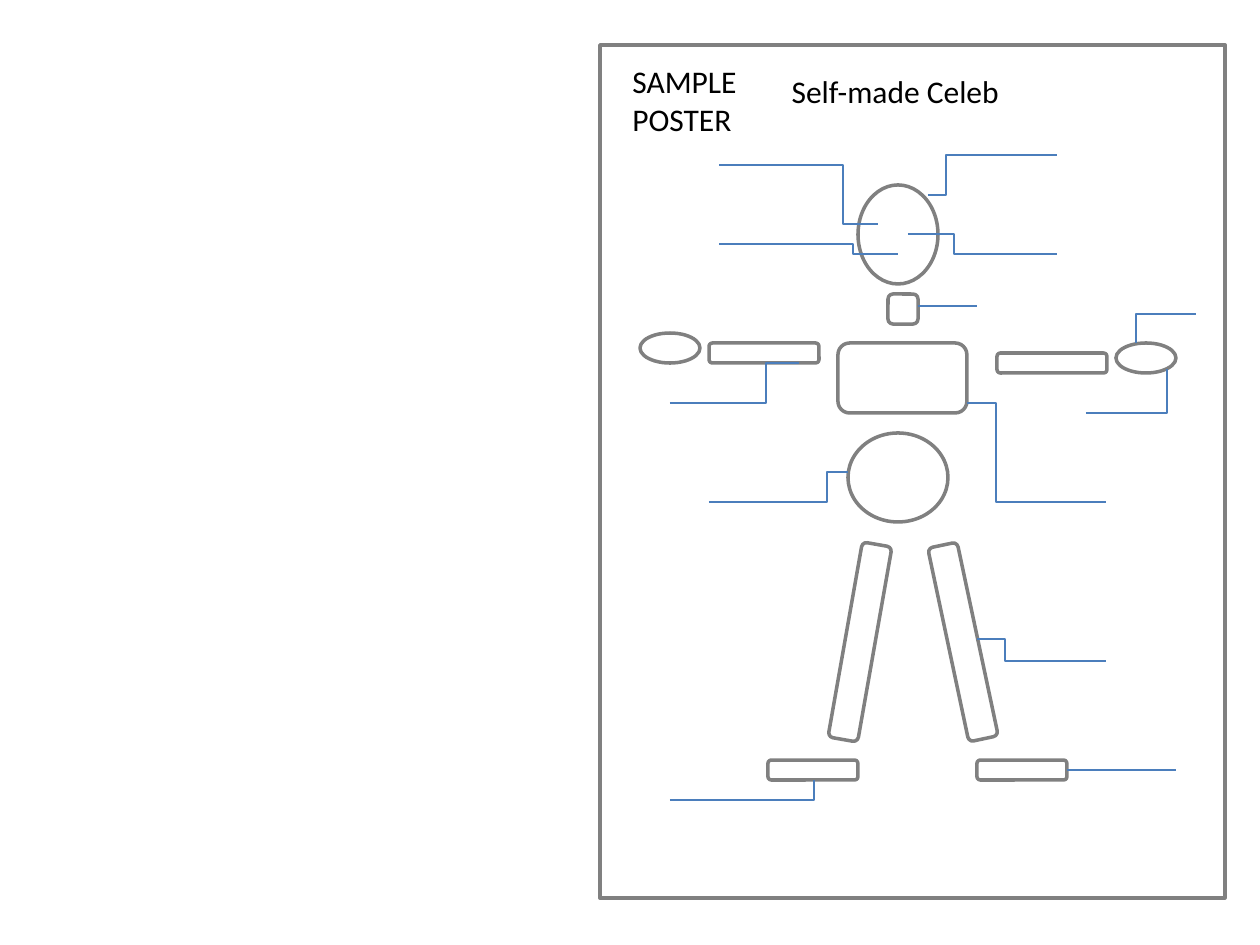
from lxml.etree import SubElement
from pptx import Presentation
from pptx.dml.color import RGBColor
from pptx.enum.shapes import MSO_CONNECTOR as LINK, MSO_SHAPE as SHAPE
from pptx.enum.text import MSO_ANCHOR, MSO_AUTO_SIZE, PP_ALIGN
from pptx.oxml.ns import qn
from pptx.util import Inches, Pt

PX = Inches(1) / 126
GRAY = RGBColor(0x80, 0x80, 0x80)
BLUE = RGBColor(0x4B, 0x7E, 0xBC)
BLACK = RGBColor(0, 0, 0)


def emu(*lengths):
    return [round(length * PX) for length in lengths]


class Poster:
    font = "Calibri"
    text_size = Pt(18)
    outline_width = Pt(2)
    label_width = Pt(0.75)

    def __init__(self, page):
        self.page = page

    def outline(self, kind, left, top, width, height, rotation=0):
        shape = self.page.shapes.add_shape(kind, *emu(left, top, width, height))
        shape.rotation = rotation
        shape.shadow.inherit = False
        shape.fill.background()
        shape.line.color.rgb = GRAY
        shape.line.width = self.outline_width
        return shape

    def label_line(self, start, end, kind=LINK.STRAIGHT):
        line = self.page.shapes.add_connector(kind, *emu(*start, *end))
        line.line.color.rgb = BLUE
        line.line.width = self.label_width
        SubElement(line.element.spPr, qn("a:effectLst"))
        return line

    def stepped_line(self, start, end, bend):
        line = self.label_line(start, end, LINK.ELBOW)
        guides = line.element.spPr.find(qn("a:prstGeom")).get_or_add_avLst()
        share = round((bend - start[0]) / (end[0] - start[0]) * 100000)
        SubElement(guides, qn("a:gd"), name="adj1", fmla=f"val {share}")

    def corner_line(self, start, end):
        line = self.label_line(start, end, LINK.ELBOW)
        line.element.spPr.find(qn("a:prstGeom")).set("prst", "bentConnector2")

    def add_lines(self, box, lines):
        frame = box.text_frame
        frame.word_wrap = True
        frame.auto_size = MSO_AUTO_SIZE.NONE
        frame.vertical_anchor = MSO_ANCHOR.TOP
        for index, words in enumerate(lines):
            para = frame.add_paragraph() if index else frame.paragraphs[0]
            para.alignment = PP_ALIGN.LEFT
            span = para.add_run()
            span.text = words
            span.font.name = self.font
            span.font.size = self.text_size
            span.font.color.rgb = BLACK

    def title(self, left, top, width, height, words):
        box = self.page.shapes.title
        box.left, box.top, box.width, box.height = emu(left, top, width, height)
        self.add_lines(box, [words])

    def text(self, left, top, width, height, lines):
        box = self.page.shapes.add_textbox(*emu(left, top, width, height))
        self.add_lines(box, lines)


def main():
    deck = Presentation()
    deck.slide_width, deck.slide_height = Inches(10), Inches(7.5)
    poster = Poster(deck.slides.add_slide(deck.slide_layouts[5]))

    poster.outline(SHAPE.RECTANGLE, 600, 45, 625, 853)

    head = (858, 185, 80, 99)
    belly = (848, 433, 100, 89)
    hands = [(640, 333, 60, 30), (1116, 343, 60, 30)]
    for place in (head, belly, *hands):
        poster.outline(SHAPE.OVAL, *place)

    neck = (888, 294, 30, 30)
    torso = (838, 343, 129, 70)
    arms = [(709, 343, 110, 20), (997, 353, 110, 20)]
    legs = [(845, 543, 30, 198, 10), (948, 543, 30, 198, 348)]
    left_foot = (768, 760, 90, 20)
    for place in (neck, torso, *arms, *legs, left_foot):
        poster.outline(SHAPE.ROUNDED_RECTANGLE, *place)
    right_foot = poster.outline(SHAPE.ROUNDED_RECTANGLE, 977, 760, 90, 20)

    for start, end, bend in (
        ((928, 195), (1057, 155), 946),
        ((878, 224), (719, 165), 843),
        ((908, 234), (1057, 254), 954),
        ((898, 254), (719, 244), 853),
        ((967, 403), (1106, 502), 996),
        ((709, 502), (848, 472), 827),
        ((670, 403), (799, 363), 766),
        ((977, 639), (1106, 661), 1005),
    ):
        poster.stepped_line(start, end, bend)

    for start, end in (
        ((1196, 314), (1136, 343)),
        ((1086, 413), (1167, 369)),
        ((670, 800), (814, 780)),
    ):
        poster.corner_line(start, end)

    poster.label_line((918, 306), (977, 306))
    poster.label_line((1067, 770), (1176, 770)).begin_connect(right_foot, 3)

    poster.title(779, 66, 248, 50, "Self-made Celeb")
    poster.text(620, 56, 139, 89, ["SAMPLE", "POSTER"])

    deck.save("out.pptx")


if __name__ == "__main__":
    main()
